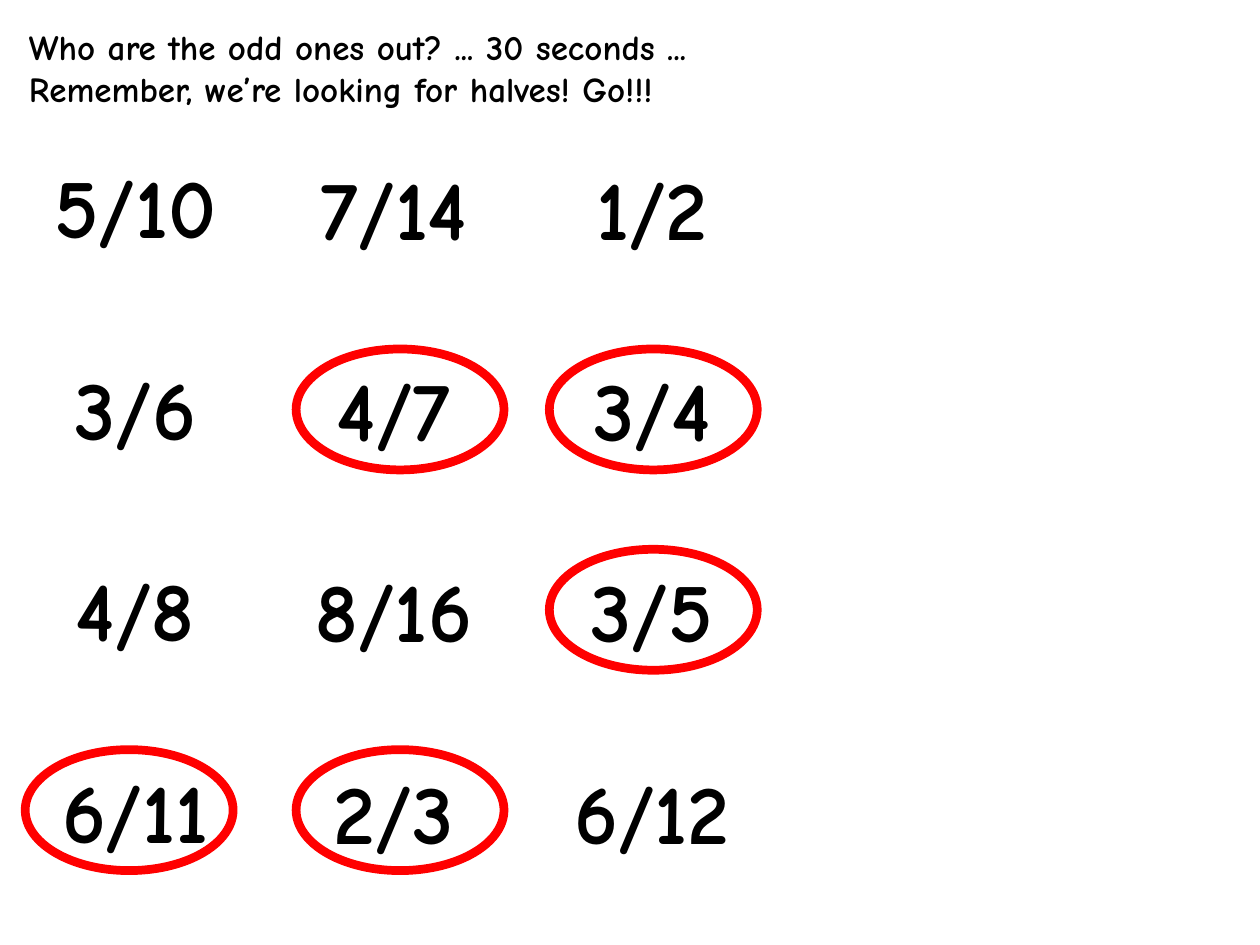
from dataclasses import dataclass

from pptx import Presentation
from pptx import util as u
from pptx.dml.color import RGBColor
from pptx.enum import shapes, text


@dataclass(frozen=True)
class Theme:
    font: str = "Comic Neue"
    ink: RGBColor = RGBColor(0, 0, 0)
    ring: RGBColor = RGBColor(255, 0, 0)
    question_size: int = 20
    fraction_size: int = 48
    row_gap: float = 57.5  # points between fractions, one empty line
    ring_width: int = 5


@dataclass(frozen=True)
class FractionColumn:
    fractions: tuple[str, ...]
    odd_rows: tuple[int, ...]  # rows that are not a half
    top: float
    ring_inset: float  # ring's distance from the column's left edge


THEME = Theme()
QUESTION = (
    "Who are the odd ones out? ... 30 seconds ...",
    "Remember, we’re looking for halves! Go!!!",
)
COLUMNS = (
    FractionColumn(("5/10", "3/6", "4/8", "6/11"), (3,), 1.18, 0.09),
    FractionColumn(("7/14", "4/7", "8/16", "2/3"), (1, 3), 1.19, 0.19),
    FractionColumn(("1/2", "3/4", "3/5", "6/12"), (1, 2), 1.19, 0.15),
)

# Grid, in inches
GRID_LEFT, COLUMN_PITCH = 0.11, 2.05
COLUMN_WIDTH, COLUMN_HEIGHT = 1.93, 5.76
RING_TOP, ROW_PITCH = 1.18, 1.59
RING_WIDTH, RING_HEIGHT = 1.65, 0.96


def write_lines(frame, lines: tuple[str, ...], size: int, align, gap: float = 0) -> None:
    frame.vertical_anchor = text.MSO_ANCHOR.TOP
    for row, line in enumerate(lines):
        paragraph = frame.paragraphs[0] if row == 0 else frame.add_paragraph()
        paragraph.text = line
        paragraph.alignment = align
        paragraph.space_before = u.Pt(gap if row else 0)
        font = paragraph.font
        font.name, font.size, font.bold = THEME.font, u.Pt(size), True
        font.color.rgb = THEME.ink


def add_question(slide) -> None:
    title = slide.shapes.title
    title.left, title.top = u.Inches(0.13), u.Inches(0.15)
    title.width, title.height = u.Inches(6.54), u.Inches(0.77)
    frame = title.text_frame
    frame.word_wrap = False
    frame.auto_size = text.MSO_AUTO_SIZE.SHAPE_TO_FIT_TEXT
    write_lines(frame, QUESTION, THEME.question_size, text.PP_ALIGN.LEFT)


def add_fractions(slide, column: FractionColumn, left: float) -> None:
    box = slide.shapes.add_textbox(
        u.Inches(left), u.Inches(column.top), u.Inches(COLUMN_WIDTH), u.Inches(COLUMN_HEIGHT)
    )
    box.text_frame.word_wrap = True
    box.text_frame.auto_size = text.MSO_AUTO_SIZE.SHAPE_TO_FIT_TEXT
    write_lines(box.text_frame, column.fractions, THEME.fraction_size,
                text.PP_ALIGN.CENTER, THEME.row_gap)


def add_ring(slide, left: float, row: int) -> None:
    ring = slide.shapes.add_shape(
        shapes.MSO_SHAPE.OVAL, u.Inches(left), u.Inches(RING_TOP + row * ROW_PITCH),
        u.Inches(RING_WIDTH), u.Inches(RING_HEIGHT),
    )
    ring.shadow.inherit = False
    ring.fill.background()
    ring.line.color.rgb = THEME.ring
    ring.line.width = u.Pt(THEME.ring_width)


def main() -> None:
    deck = Presentation()
    deck.slide_width, deck.slide_height = u.Inches(10), u.Inches(7.5)
    slide = deck.slides.add_slide(deck.slide_layouts[5])  # title only
    add_question(slide)

    # Fractions first, so that the answer rings lie on top
    lefts = [GRID_LEFT + i * COLUMN_PITCH for i in range(len(COLUMNS))]
    for column, left in zip(COLUMNS, lefts):
        add_fractions(slide, column, left)
    for column, left in zip(COLUMNS, lefts):
        for row in column.odd_rows:
            add_ring(slide, left + column.ring_inset, row)

    deck.save("out.pptx")


if __name__ == "__main__":
    main()
